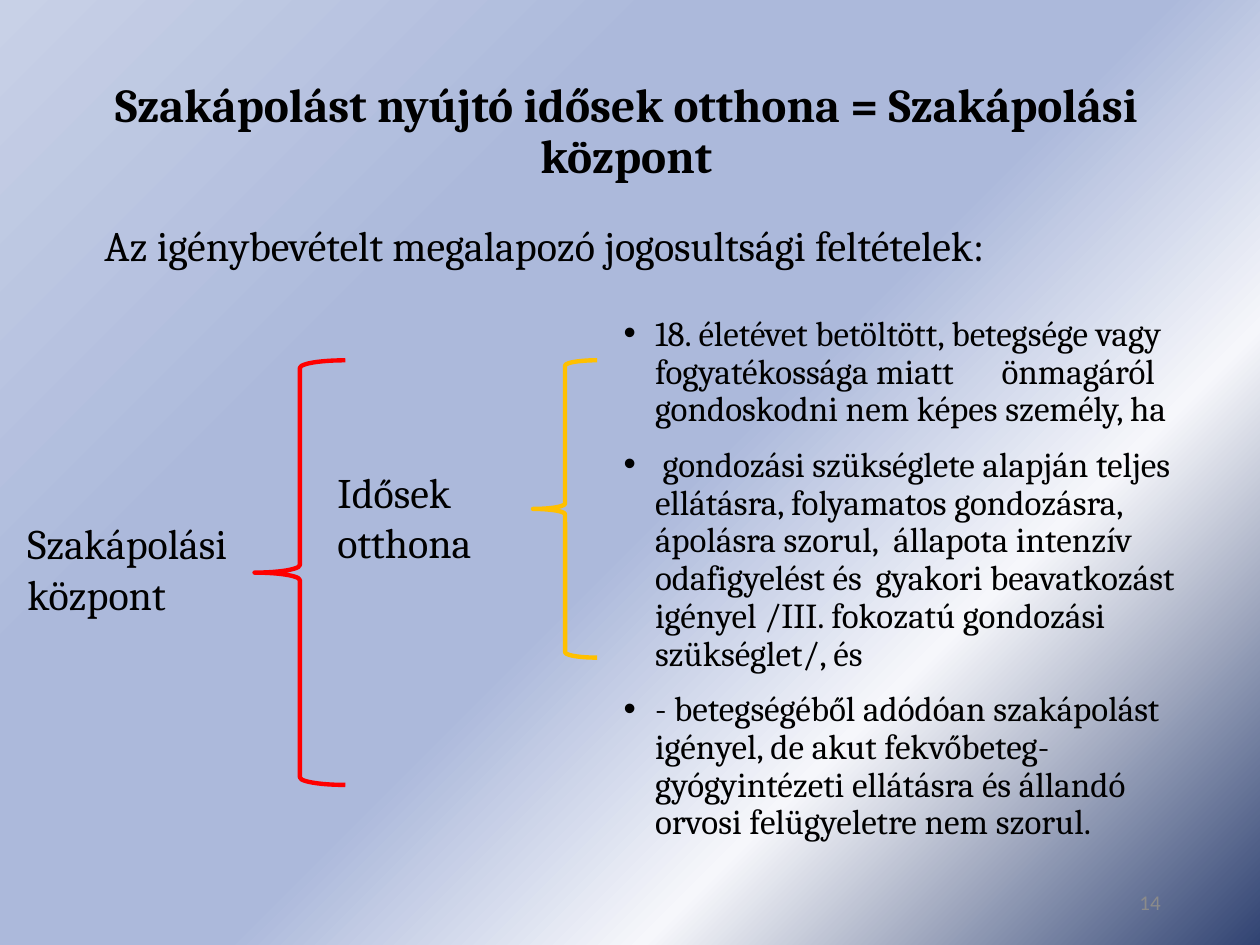
from lxml import etree
from pptx import Presentation
from pptx.dml.color import RGBColor
from pptx.enum.shapes import MSO_SHAPE as Shape
from pptx.enum.text import MSO_ANCHOR as Anchor, PP_ALIGN as Align
from pptx.oxml.ns import qn
from pptx.util import Inches, Pt

BLACK = RGBColor(0x00, 0x00, 0x00)
GRAY = RGBColor(0x8B, 0x8B, 0x8B)
RED = RGBColor(0xFF, 0x00, 0x00)
AMBER = RGBColor(0xFF, 0xC0, 0x00)
NAVY = RGBColor(0x31, 0x43, 0x72)
WHITE = RGBColor(0xF6, 0xF7, 0xFB)
BLUE = RGBColor(0xAC, 0xB9, 0xDB)
PALE = RGBColor(0xC8, 0xD1, 0xE7)

# Position in percent, colour, opacity in percent
BACKGROUND = [(0, NAVY, 87), (28, WHITE, 100), (47, BLUE, 100),
              (69, BLUE, 100), (100, PALE, 100)]

CONDITIONS = [
    "18. életévet betöltött, betegsége vagy fogyatékossága miatt \tönmagáról "
    "gondoskodni nem képes személy, ha",
    " gondozási szükséglete alapján teljes ellátásra, folyamatos gondozásra, "
    "ápolásra szorul,  állapota intenzív odafigyelést és \tgyakori beavatkozást "
    "igényel /III. fokozatú gondozási \tszükséglet/, és",
    "- betegségéből adódóan szakápolást igényel, de akut "
    "fekvőbeteg-gyógyintézeti ellátásra és állandó orvosi felügyeletre nem szorul.",
]


class SlideBuilder:
    font_name = "Cambria"
    bullet_indent = Inches(0.25)

    def __init__(self, slide):
        self.slide = slide

    def background(self, stops):
        fill = self.slide.background.fill
        fill.gradient()
        gradient = self.slide.background._cSld.find(".//" + qn("a:gradFill"))
        for child in list(gradient):
            gradient.remove(child)
        stop_list = etree.SubElement(gradient, qn("a:gsLst"))
        for position, color, opacity in stops:
            stop = etree.SubElement(stop_list, qn("a:gs"), pos=str(position * 1000))
            value = etree.SubElement(stop, qn("a:srgbClr"), val=str(color))
            if opacity < 100:
                etree.SubElement(value, qn("a:alpha"), val=str(opacity * 1000))
        circle = etree.SubElement(gradient, qn("a:path"), path="circle")
        etree.SubElement(circle, qn("a:fillToRect"), l="100000", t="100000")
        etree.SubElement(gradient, qn("a:tileRect"), r="-100000", b="-100000")

    def text(self, left, top, width, height, paragraphs, size, color=BLACK,
             font=None, bold=False, align=Align.LEFT, anchor=Anchor.TOP,
             line_spacing=None, bullets=False):
        """Each paragraph is a list of (text, size) runs or a plain string."""
        shape = self.slide.shapes.add_textbox(
            Inches(left), Inches(top), Inches(width), Inches(height))
        frame = shape.text_frame
        frame.word_wrap = True
        frame.vertical_anchor = anchor
        for index, runs in enumerate(paragraphs):
            paragraph = frame.add_paragraph() if index else frame.paragraphs[0]
            paragraph.alignment = align
            if line_spacing:
                paragraph.line_spacing = line_spacing
            if index:
                paragraph.space_before = Pt(10)
            if bullets:
                self.bullet(paragraph)
            if isinstance(runs, str):
                runs = [(runs, size)]
            for content, run_size in runs:
                run = paragraph.add_run()
                run.text = content
                run.font.name = font or self.font_name
                run.font.size = Pt(run_size)
                run.font.bold = bold
                run.font.color.rgb = color

    def bullet(self, paragraph):
        properties = paragraph._p.get_or_add_pPr()
        properties.set("marL", str(self.bullet_indent))
        properties.set("indent", str(-self.bullet_indent))
        etree.SubElement(properties, qn("a:buFont"), typeface="Arial")
        etree.SubElement(properties, qn("a:buChar"), char="•")

    def brace(self, left, top, width, height, color):
        shape = self.slide.shapes.add_shape(
            Shape.LEFT_BRACE, Inches(left), Inches(top), Inches(width), Inches(height))
        shape.shadow.inherit = False
        shape.fill.background()
        shape.line.color.rgb = color
        shape.line.width = Pt(2.5)


def main():
    presentation = Presentation()
    presentation.slide_width = Inches(10)
    presentation.slide_height = Inches(7.5)
    builder = SlideBuilder(presentation.slides.add_slide(presentation.slide_layouts[6]))
    builder.background(BACKGROUND)

    # Title and lead-in
    builder.text(0.65, 0.51, 8.64, 1.09,
                 ["Szakápolást nyújtó idősek otthona = Szakápolási központ"], 27,
                 bold=True, align=Align.CENTER, anchor=Anchor.MIDDLE, line_spacing=0.9)
    builder.text(0.73, 1.68, 8.62, 0.52,
                 ["Az igénybevételt megalapozó jogosultsági feltételek:"], 24,
                 anchor=Anchor.BOTTOM, line_spacing=0.9)

    # Eligibility conditions
    builder.text(4.85, 2.46, 4.88, 4.5, CONDITIONS, 20, line_spacing=0.9, bullets=True)

    # Braces and their labels
    builder.brace(4.23, 2.86, 0.51, 2.36, AMBER)
    builder.brace(2.02, 2.86, 0.72, 3.37, RED)
    builder.text(2.58, 3.65, 1.53, 0.91,
                 [[("Idősek", 24), (" ", 13.5), ("otthona", 24)]], 24)
    builder.text(0.12, 4.06, 1.9, 0.91, ["Szakápolási központ"], 24)

    # Slide number
    builder.text(7.06, 6.96, 2.25, 0.4, ["14"], 12, color=GRAY, font="Calibri",
                 align=Align.RIGHT, anchor=Anchor.MIDDLE)

    presentation.save("out.pptx")


if __name__ == "__main__":
    main()
